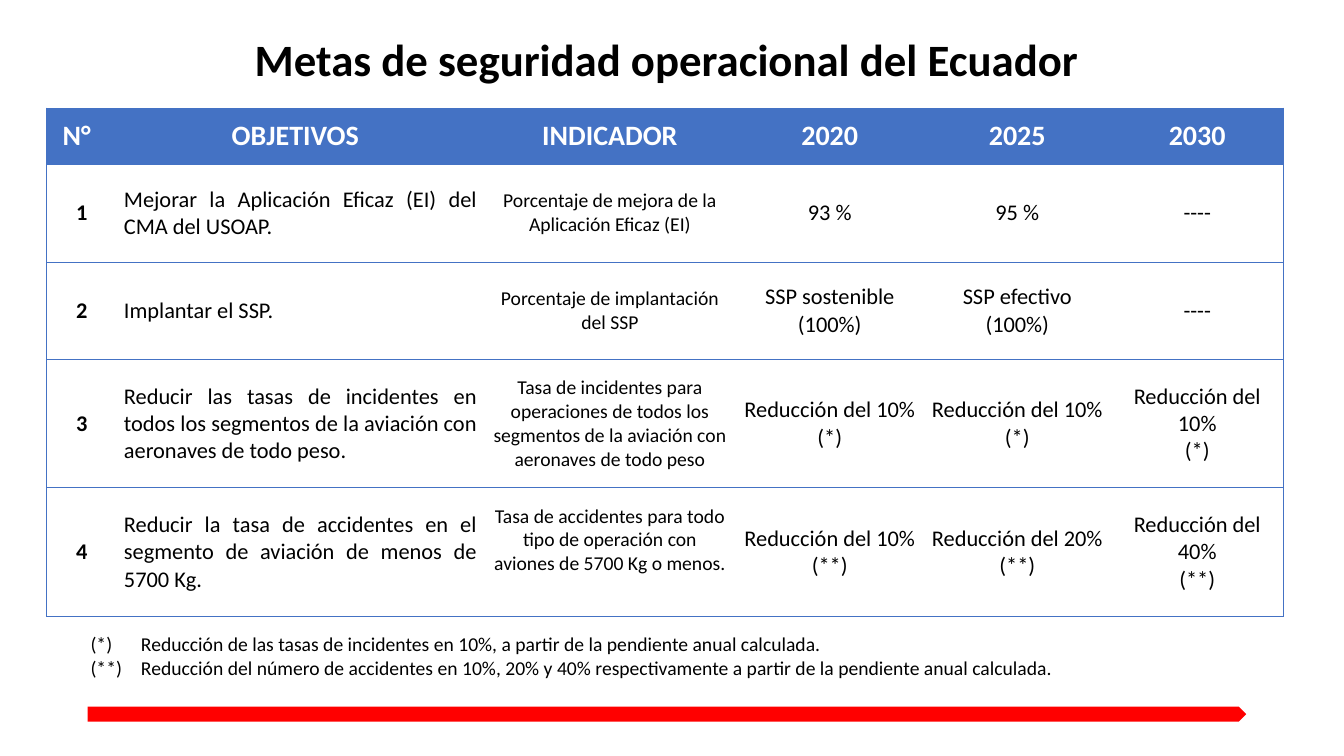
from dataclasses import dataclass

from lxml import etree
from pptx import Presentation
from pptx.dml.color import RGBColor
from pptx.enum.shapes import MSO_SHAPE
from pptx.enum.text import MSO_ANCHOR, PP_ALIGN
from pptx.oxml.ns import qn
from pptx.util import Inches, Pt

CENTER, JUSTIFY, LEFT = PP_ALIGN.CENTER, PP_ALIGN.JUSTIFY, PP_ALIGN.LEFT
MIDDLE, TOP = MSO_ANCHOR.MIDDLE, MSO_ANCHOR.TOP
ARROW_BAR = MSO_SHAPE.PENTAGON

COLORS = {"blue": "4472C4", "red": "FF0000", "black": "000000", "white": "FFFFFF"}
FONT = "Calibri"


@dataclass(frozen=True)
class TextStyle:
    size: int
    bold: bool = False
    color: str = "black"
    align: PP_ALIGN = CENTER
    indent: float = 0


@dataclass(frozen=True)
class Goal:
    number: str
    objective: str
    indicator: str
    targets: tuple[str, str, str]


HEADINGS = ("N°", "OBJETIVOS", "INDICADOR", "2020", "2025", "2030")
GOALS = (
    Goal("1", "Mejorar la Aplicación Eficaz (EI) del CMA del USOAP.",
         "Porcentaje de mejora de la Aplicación Eficaz (EI)",
         ("93 %", "95 %", "----")),
    Goal("2", "Implantar el SSP.",
         "Porcentaje de implantación del SSP",
         ("SSP sostenible (100%)", "SSP efectivo\n(100%)", "----")),
    Goal("3", "Reducir las tasas de incidentes en todos los segmentos de la "
         "aviación con aeronaves de todo peso.",
         "Tasa de incidentes para operaciones de todos los segmentos de la "
         "aviación con aeronaves de todo peso",
         ("Reducción del 10%\n(*)",) * 3),
    Goal("4", "Reducir la tasa de accidentes en el segmento de aviación de "
         "menos de 5700 Kg.",
         "Tasa de accidentes para todo tipo de operación con aviones de "
         "5700 Kg o menos.",
         tuple(f"Reducción del {percent}%\n(**)" for percent in (10, 20, 40))),
)
NOTES = (
    "(*)\tReducción de las tasas de incidentes en 10%, a partir de la pendiente "
    "anual calculada.\n"
    "(**)\tReducción del número de accidentes en 10%, 20% y 40% respectivamente "
    "a partir de la pendiente anual calculada."
)

COLUMN_WIDTHS = (0.6, 3.74, 2.5, 1.86, 1.86, 1.71)
ROW_HEIGHTS = (0.56, 0.97, 0.97, 1.27, 1.28)
TITLE_STYLE = TextStyle(32, bold=True)
HEADING_STYLE = TextStyle(20, bold=True, color="white")
NOTE_STYLE = TextStyle(14, align=LEFT)
TARGET_STYLE = TextStyle(16)
COLUMN_STYLES = (
    TextStyle(16, bold=True, indent=0.1),
    TextStyle(16, align=JUSTIFY, indent=0.1),
    TextStyle(14),
    TARGET_STYLE, TARGET_STYLE, TARGET_STYLE,
)


def rgb(name: str) -> RGBColor:
    return RGBColor.from_string(COLORS[name])


def write_text(text_frame, text: str, style: TextStyle) -> None:
    """Fill a text frame, one paragraph for each line."""
    text_frame.word_wrap = True
    font_values = {"name": FONT, "size": Pt(style.size), "bold": style.bold}
    for index, line in enumerate(text.split("\n")):
        paragraph = text_frame.add_paragraph() if index else text_frame.paragraphs[0]
        paragraph.alignment = style.align
        if style.indent:
            properties = paragraph._p.get_or_add_pPr()
            properties.set("marL", str(Inches(style.indent)))
            properties.set("indent", "0")
        run = paragraph.add_run()
        run.text = line
        for name, value in font_values.items():
            setattr(run.font, name, value)
        run.font.color.rgb = rgb(style.color)


def add_text_box(slide, box: tuple[float, ...], text: str, style: TextStyle,
                 anchor: MSO_ANCHOR) -> None:
    text_frame = slide.shapes.add_textbox(*map(Inches, box)).text_frame
    text_frame.vertical_anchor = anchor
    write_text(text_frame, text, style)


def set_borders(cell, visible_sides: str) -> None:
    """Draw the named sides (L, R, T, B) and clear the others."""
    properties = cell._tc.get_or_add_tcPr()
    for side in "LRTB":
        line = etree.SubElement(properties, qn(f"a:ln{side}"), w=str(Pt(0.5)))
        if side in visible_sides:
            fill = etree.SubElement(line, qn("a:solidFill"))
            etree.SubElement(fill, qn("a:srgbClr"), val=COLORS["blue"])
        else:
            etree.SubElement(line, qn("a:noFill"))


def add_goal_table(slide) -> None:
    rows = [HEADINGS] + [
        (goal.number, goal.objective, goal.indicator, *goal.targets) for goal in GOALS
    ]
    table = slide.shapes.add_table(
        len(rows), len(HEADINGS), Inches(0.46), Inches(1.07),
        Inches(sum(COLUMN_WIDTHS)), Inches(sum(ROW_HEIGHTS))).table
    table.horz_banding = False
    for column, width in zip(table.columns, COLUMN_WIDTHS):
        column.width = Inches(width)
    for row, height in zip(table.rows, ROW_HEIGHTS):
        row.height = Inches(height)

    last_column = len(HEADINGS) - 1
    cell_values = {
        "vertical_anchor": MIDDLE,
        "margin_left": Inches(0.07), "margin_right": Inches(0.07),
        "margin_top": 0, "margin_bottom": 0,
    }
    for row_index, texts in enumerate(rows):
        for column_index, text in enumerate(texts):
            cell = table.cell(row_index, column_index)
            for name, value in cell_values.items():
                setattr(cell, name, value)
            outer_side = {0: "L", last_column: "R"}.get(column_index, "")
            set_borders(cell, "TB" + outer_side)
            if row_index == 0:
                cell.fill.solid()
                cell.fill.fore_color.rgb = rgb("blue")
                style = HEADING_STYLE
            else:
                cell.fill.background()
                style = COLUMN_STYLES[column_index]
            write_text(cell.text_frame, text, style)

    # The last indicator sits half a line above the middle
    table.cell(len(GOALS), 2).margin_bottom = Inches(0.24)


def add_red_bar(slide) -> None:
    bar = slide.shapes.add_shape(
        ARROW_BAR, Inches(0.87), Inches(7.01), Inches(11.49), Inches(0.15))
    bar.shadow.inherit = False
    bar.fill.solid()
    bar.fill.fore_color.rgb = rgb("red")
    bar.line.fill.background()


def main() -> None:
    presentation = Presentation()
    presentation.slide_width = Inches(13.33)
    presentation.slide_height = Inches(7.5)
    slide = presentation.slides.add_slide(presentation.slide_layouts[6])

    # Bar, title, table and footnotes
    add_red_bar(slide)
    add_text_box(slide, (0.38, 0.09, 12.47, 0.99),
                 "Metas de seguridad operacional del Ecuador", TITLE_STYLE, MIDDLE)
    add_goal_table(slide)
    add_text_box(slide, (0.8, 6.22, 11.56, 0.57), NOTES, NOTE_STYLE, TOP)

    presentation.save("out.pptx")


if __name__ == "__main__":
    main()
